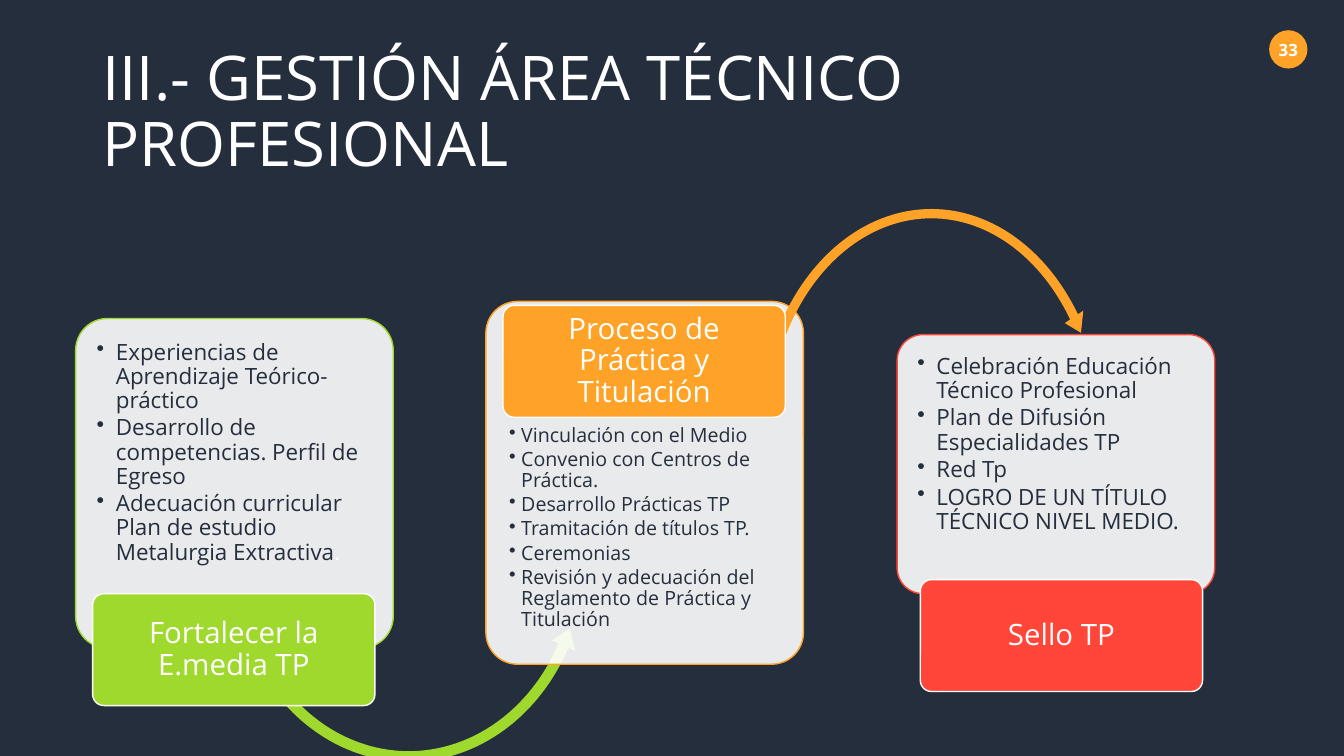
from lxml import etree
from pptx import Presentation
from pptx.dml.color import RGBColor
from pptx.enum.shapes import MSO_SHAPE
from pptx.enum.text import MSO_ANCHOR, PP_ALIGN
from pptx.oxml.ns import qn
from pptx.util import Inches, Pt

ROUND, OVAL = MSO_SHAPE.ROUNDED_RECTANGLE, MSO_SHAPE.OVAL
LEFT_ARC, RIGHT_ARC = MSO_SHAPE.LEFT_CIRCULAR_ARROW, MSO_SHAPE.CIRCULAR_ARROW
MID, TOP = MSO_ANCHOR.MIDDLE, MSO_ANCHOR.TOP
CENTER, LEFT = PP_ALIGN.CENTER, PP_ALIGN.LEFT
WIDE, HIGH = Inches(13.33), Inches(7.5)
FONT = "Open Sans"
HEX = {"navy": "242E3D", "white": "FFFFFF", "green": "9FD92E",
       "orange": "FFA328", "red": "FF4638"}
CARD_W, TAG_W, TAG_H = 23.63, 21, 14.8

STAGES = [
    {"hue": "green", "card": (5.63, 42.13, 43.6), "tag": (6.9, 78.53),
     "body": (6.15, 43.2, 22.5, 32.27), "size": 16, "indent": 0.19,
     "name": "Fortalecer la E.media TP",
     "items": [["Experiencias de Aprendizaje Teórico-práctico"],
               ["Desarrollo de competencias. Perfil de Egreso"],
               ["Adecuación curricular Plan de estudio Metalurgia Extractiva",
                (".", "white")]],
     "arrow": (LEFT_ARC, (16.65, 45.87, 27.53, 55.87),
               (0.029, 3.52, 17.73, 86.7, 0.034))},
    {"hue": "orange", "card": (36.15, 39.87, 48), "tag": (37.43, 40.4),
     "body": (36.83, 54.4, 22.43, 32.27), "size": 14, "indent": 0.12,
     "name": "Proceso de Práctica y Titulación",
     "items": [["Vinculación con el Medio"],
               ["Convenio con Centros de Práctica."],
               ["Desarrollo Prácticas TP"],
               ["Tramitación de títulos TP."],
               ["Ceremonias"],
               ["Revisión y adecuación del Reglamento de Práctica y Titulación"]],
     "arrow": (RIGHT_ARC, (55.95, 26.8, 26.7, 61.07),
               (0.026, 3.2, 192.456, 123.166, 0.031))},
    {"hue": "red", "card": (66.75, 44.27, 34.27), "tag": (68.48, 76.67),
     "body": (67.2, 45.07, 22.73, 25.33), "size": 16, "indent": 0.19,
     "name": "Sello TP",
     "items": [["Celebración Educación Técnico Profesional"],
               ["Plan de Difusión Especialidades TP"],
               ["Red Tp"],
               ["LOGRO DE UN TÍTULO TÉCNICO NIVEL MEDIO."]],
     "arrow": None},
]


def color(name):
    """Return the named colour."""
    return RGBColor.from_string(HEX[name])


def place(x, y, w, h):
    """Turn percent shares of the slide into lengths."""
    return [int(share * side / 100)
            for share, side in zip((x, y, w, h), (WIDE, HIGH, WIDE, HIGH))]


def add_form(slide, kind, area, fill, line=None, adjust=()):
    """Draw a filled preset shape."""
    form = slide.shapes.add_shape(kind, *place(*area))
    form.shadow.inherit = False
    form.fill.solid()
    form.fill.fore_color.rgb = color(fill)
    if line:
        form.line.color.rgb = color(line)
        form.line.width = Pt(1)
    else:
        form.line.fill.background()
    for spot, value in enumerate(adjust):
        form.adjustments[spot] = value
    return form


def set_frame(frame, pad=(0.1, 0.05), anchor=MID, wrap=True):
    """Set the insets, anchor and wrap of a text frame."""
    frame.margin_left = frame.margin_right = Inches(pad[0])
    frame.margin_top = frame.margin_bottom = Inches(pad[1])
    frame.vertical_anchor = anchor
    frame.word_wrap = wrap


def add_run(para, text, size, hue="white", bold=False):
    """Add one run of text."""
    run = para.add_run()
    run.text = text
    run.font.name = FONT
    run.font.size = Pt(size)
    run.font.bold = bold
    run.font.color.rgb = color(hue)


def set_para(para, align=LEFT, after=0):
    """Set the alignment and tight spacing of a paragraph."""
    para.alignment = align
    para.line_spacing = 0.9
    para.space_after = Pt(after)


def add_bullet(para, indent):
    """Give a paragraph a hanging bullet."""
    props = para._p.get_or_add_pPr()
    props.set("marL", str(Inches(indent)))
    props.set("indent", str(-Inches(indent)))
    etree.SubElement(props, qn("a:buChar")).set("char", "•")


def add_list(slide, area, items, size, indent):
    """Write a bulleted list."""
    frame = slide.shapes.add_textbox(*place(*area)).text_frame
    set_frame(frame, (0.14, 0.14), TOP)
    for spot, item in enumerate(items):
        para = frame.add_paragraph() if spot else frame.paragraphs[0]
        add_bullet(para, indent)
        set_para(para, after=0.15 * size)
        for part in item:
            text, hue = (part, "navy") if isinstance(part, str) else part
            add_run(para, text, size, hue)


def add_card(slide, x, y, h, hue):
    """Draw a pale, slightly clear card."""
    card = add_form(slide, ROUND, (x, y, CARD_W, h), "white", hue, (0.1,))
    tone = card._element.spPr.find(qn("a:solidFill"))[0]
    etree.SubElement(tone, qn("a:alpha")).set("val", "90000")


def add_tag(slide, x, y, text, hue):
    """Draw the name tag of a stage."""
    area = (x, y, TAG_W, TAG_H)
    frame = add_form(slide, ROUND, area, hue, "white", (0.1,)).text_frame
    set_frame(frame, (0.07, 0.06))
    set_para(frame.paragraphs[0], CENTER)
    add_run(frame.paragraphs[0], text, 21)


def add_stage(slide, stage):
    """Draw a stage with its card, list, arrow and tag."""
    hue = stage["hue"]
    add_card(slide, *stage["card"], hue)
    add_list(slide, stage["body"], stage["items"], stage["size"], stage["indent"])
    if stage["arrow"]:
        kind, area, adjust = stage["arrow"]
        add_form(slide, kind, area, hue, adjust=adjust)
    add_tag(slide, *stage["tag"], stage["name"], hue)


def add_badge(slide, text):
    """Draw the page number in its disc."""
    frame = add_form(slide, OVAL, (94.43, 4, 2.85, 5.07), "orange").text_frame
    set_frame(frame, (0, 0), wrap=False)
    frame.paragraphs[0].alignment = CENTER
    add_run(frame.paragraphs[0], text, 12, bold=True)


def add_title(slide, text):
    """Write the slide title."""
    area = place(6.9, 5.33, 86.25, 19.33)
    frame = slide.shapes.add_textbox(*area).text_frame
    set_frame(frame)
    set_para(frame.paragraphs[0])
    add_run(frame.paragraphs[0], text, 44)


def main():
    """Build and save the slide."""
    deck = Presentation()
    deck.slide_width, deck.slide_height = WIDE, HIGH
    slide = deck.slides.add_slide(deck.slide_layouts[6])
    slide.background.fill.solid()
    slide.background.fill.fore_color.rgb = color("navy")
    add_badge(slide, "33")
    add_title(slide, "III.- GESTIÓN ÁREA TÉCNICO PROFESIONAL")
    for stage in STAGES:
        add_stage(slide, stage)
    deck.save("out.pptx")


if __name__ == "__main__":
    main()
